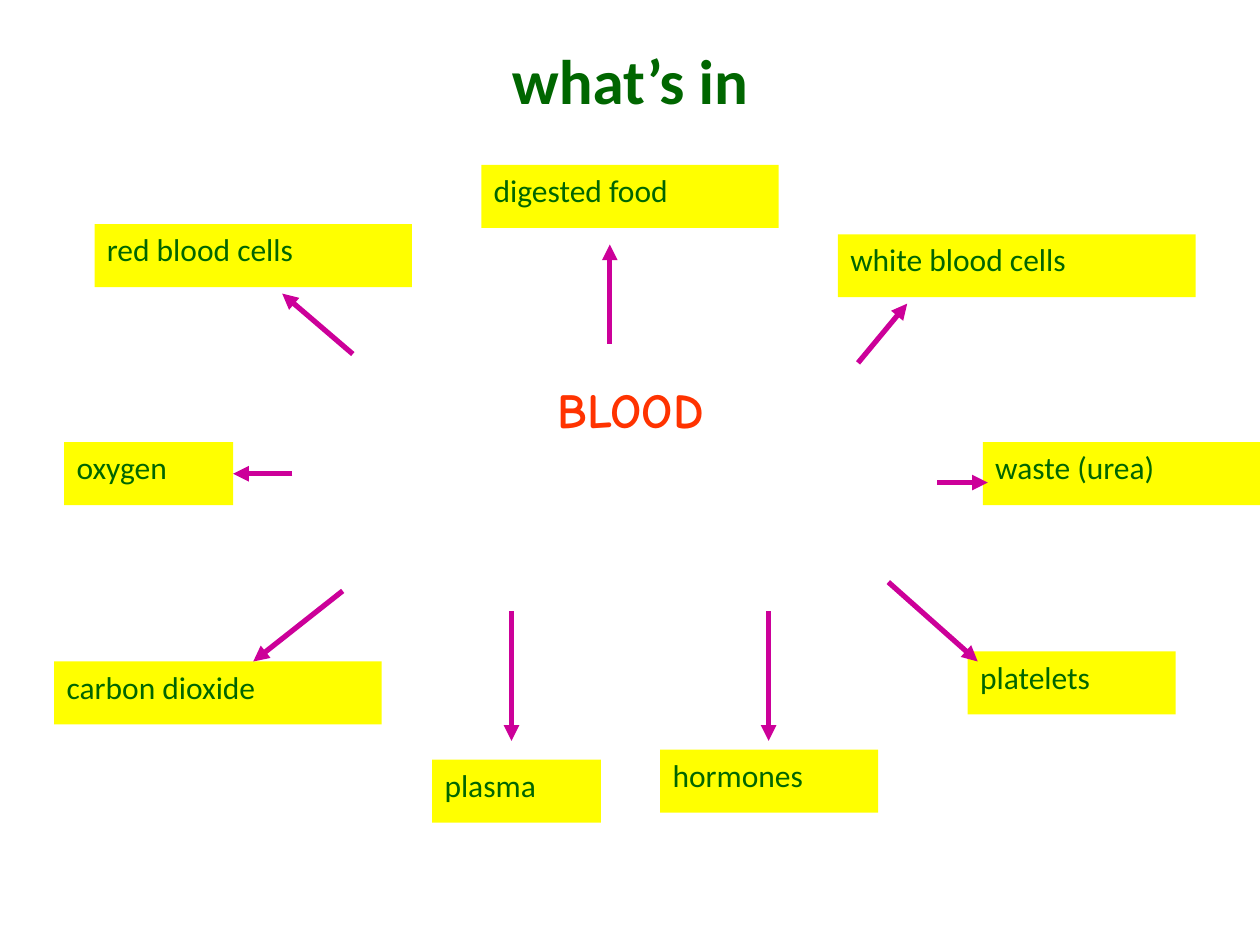
"""Build a slide showing the components of blood around a central word."""
import pptx
import pptx.dml.color
import pptx.enum.shapes
import pptx.enum.text
import pptx.oxml
import pptx.oxml.ns
import pptx.util

Inches = pptx.util.Inches
RGBColor = pptx.dml.color.RGBColor
ALIGN = pptx.enum.text.PP_ALIGN

GREEN = RGBColor(0x00, 0x66, 0x00)
YELLOW = RGBColor(0xFF, 0xFF, 0x00)
ORANGE = RGBColor(0xFF, 0x33, 0x00)
MAGENTA = RGBColor(0xCC, 0x00, 0x99)
LABEL_HEIGHT = 0.5
RIGHT_SIDE = 3

TITLE = "what’s in"
CENTRE_WORD = "BLOOD"
# label: (left, top, width), arrow start, arrow end (None joins the label)
COMPONENTS = {
    "red blood cells": ((0.75, 1.78, 2.52), (2.8, 2.81), (2.24, 2.33)),
    "white blood cells": ((6.65, 1.86, 2.84), (6.81, 2.88), (7.2, 2.41)),
    "platelets": ((7.68, 5.17, 1.65), (7.05, 4.62), (7.76, 5.25)),
    "plasma": ((3.43, 6.03, 1.34), (4.06, 4.85), (4.06, 5.88)),
    "carbon dioxide": ((0.43, 5.25, 2.6), (2.72, 4.69), (2.01, 5.25)),
    "digested food": ((3.82, 1.31, 2.36), (4.84, 2.73), (4.84, 1.94)),
    "waste (urea)": ((7.8, 3.51, 2.2), (7.44, 3.83), (7.84, 3.83)),
    "hormones": ((5.24, 5.95, 1.73), (6.1, 4.85), (6.1, 5.88)),
    "oxygen": ((0.51, 3.51, 1.34), (2.32, 3.76), None),
}


def write(shape, text, size, color, font="Calibri", bold=False, align=ALIGN.LEFT, wrap=True):
    """Put one formatted paragraph at the top of a shape."""
    frame = shape.text_frame
    frame.text = text
    frame.word_wrap = wrap
    frame.auto_size = pptx.enum.text.MSO_AUTO_SIZE.NONE
    frame.vertical_anchor = pptx.enum.text.MSO_ANCHOR.TOP
    paragraph = frame.paragraphs[0]
    paragraph.alignment = align
    run_font = paragraph.runs[0].font
    run_font.name = font
    run_font.size = pptx.util.Pt(size)
    run_font.bold = bold
    run_font.color.rgb = color


def add_label(slide, text, left, top, width):
    """Add a yellow label."""
    label = slide.shapes.add_shape(
        pptx.enum.shapes.MSO_SHAPE.RECTANGLE,
        Inches(left), Inches(top), Inches(width), Inches(LABEL_HEIGHT))
    label.shadow.inherit = False
    label.fill.solid()
    label.fill.fore_color.rgb = YELLOW
    label.line.fill.background()
    write(label, text, 18, GREEN)
    return label


def add_arrow(slide, start, end, label):
    """Add an arrow to a point, or joined to the label's right side."""
    points = [Inches(value) for value in (*start, *(end or start))]
    arrow = slide.shapes.add_connector(pptx.enum.shapes.MSO_CONNECTOR.STRAIGHT, *points)
    if end is None:
        arrow.end_connect(label, RIGHT_SIDE)
    arrow.line.color.rgb = MAGENTA
    arrow.line.width = pptx.util.Pt(3)
    head = pptx.oxml.parse_xml(
        f'<a:tailEnd {pptx.oxml.ns.nsdecls("a")} type="triangle"/>')
    arrow.line._get_or_add_ln().append(head)
    arrow._element.spPr.append(
        pptx.oxml.parse_xml(f'<a:effectLst {pptx.oxml.ns.nsdecls("a")}/>'))


def main():
    """Build and save the slide."""
    presentation = pptx.Presentation()
    presentation.slide_width, presentation.slide_height = Inches(10), Inches(7.5)
    slide = presentation.slides.add_slide(presentation.slide_layouts.get_by_name("Title Only"))

    title = slide.shapes.title
    title.left, title.top = Inches(0), Inches(0.28)
    title.width, title.height = Inches(10), Inches(0.7)
    write(title, TITLE, 36, GREEN, bold=True, align=ALIGN.CENTER)

    labels = {text: add_label(slide, text, *place)
              for text, (place, _, _) in COMPONENTS.items()}
    centre = slide.shapes.add_textbox(Inches(2.8), Inches(2.96), Inches(4.41), Inches(1.67))
    write(centre, CENTRE_WORD, 28, ORANGE, "Comic Neue", True, ALIGN.CENTER, wrap=False)
    for text, (_, start, end) in COMPONENTS.items():
        add_arrow(slide, start, end, labels[text])

    presentation.save("out.pptx")


if __name__ == "__main__":
    main()
